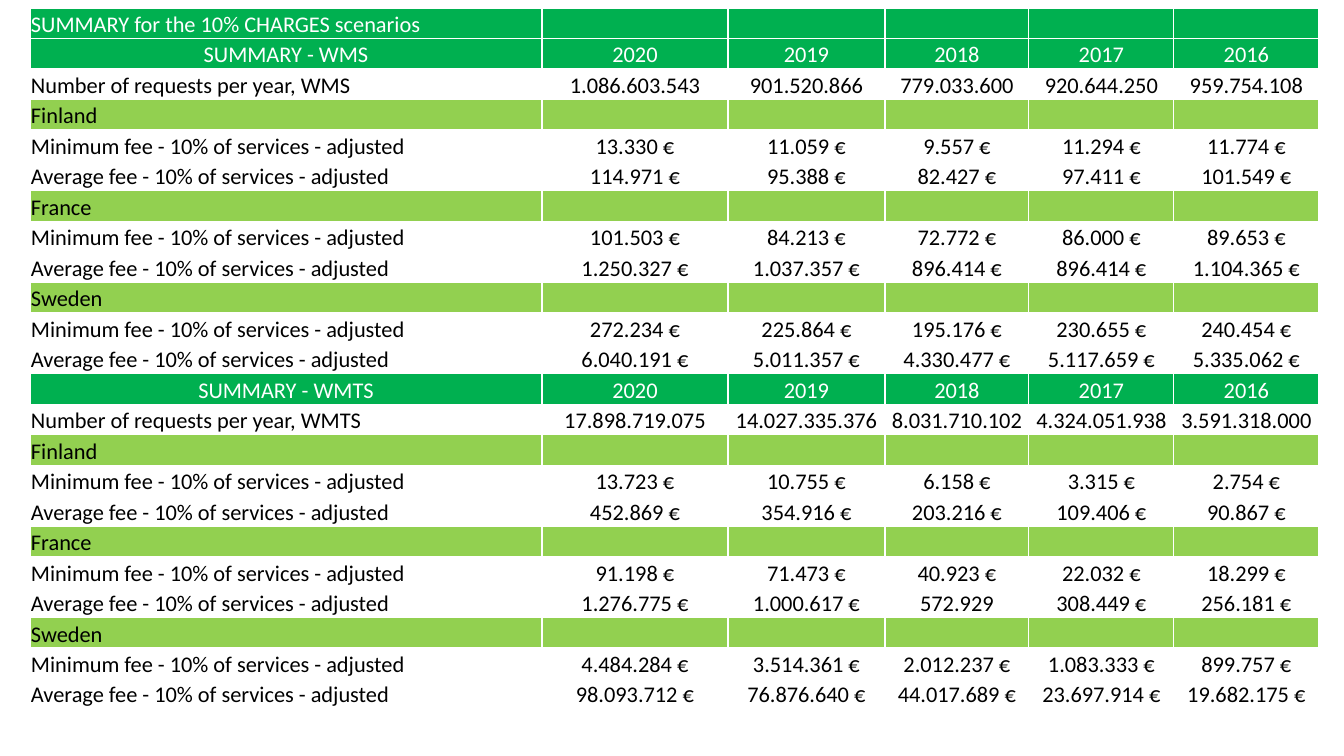
from lxml.etree import SubElement
from pptx import Presentation
from pptx.dml.color import RGBColor
from pptx.enum.text import MSO_ANCHOR as Anchor, PP_ALIGN as Align
from pptx.oxml.ns import qn
from pptx.util import Inches, Pt

PX = Inches(1) / 100.8
WHITE = RGBColor(0xFF, 0xFF, 0xFF)
BLACK = RGBColor(0x00, 0x00, 0x00)
GREEN = RGBColor(0x00, 0xB0, 0x50)
LIME = RGBColor(0x92, 0xD0, 0x50)

TITLE = "SUMMARY for the 10% CHARGES scenarios"
YEARS = "2020, 2019, 2018, 2017, 2016"
FEES = ("Minimum", "Average")
COUNTRIES = ("Finland", "France", "Sweden")
COLUMN_WIDTHS = (512, 186, 157, 144, 145, 145)

SERVICES = {
    "WMS": (
        "1.086.603.543, 901.520.866, 779.033.600, 920.644.250, 959.754.108",
        (
            ("13.330 €, 11.059 €, 9.557 €, 11.294 €, 11.774 €",
             "114.971 €, 95.388 €, 82.427 €, 97.411 €, 101.549 €"),
            ("101.503 €, 84.213 €, 72.772 €, 86.000 €, 89.653 €",
             "1.250.327 €, 1.037.357 €, 896.414 €, 896.414 €, 1.104.365 €"),
            ("272.234 €, 225.864 €, 195.176 €, 230.655 €, 240.454 €",
             "6.040.191 €, 5.011.357 €, 4.330.477 €, 5.117.659 €, 5.335.062 €"),
        ),
    ),
    "WMTS": (
        "17.898.719.075, 14.027.335.376, 8.031.710.102, 4.324.051.938, 3.591.318.000",
        (
            ("13.723 €, 10.755 €, 6.158 €, 3.315 €, 2.754 €",
             "452.869 €, 354.916 €, 203.216 €, 109.406 €, 90.867 €"),
            ("91.198 €, 71.473 €, 40.923 €, 22.032 €, 18.299 €",
             "1.276.775 €, 1.000.617 €, 572.929, 308.449 €, 256.181 €"),
            ("4.484.284 €, 3.514.361 €, 2.012.237 €, 1.083.333 €, 899.757 €",
             "98.093.712 €, 76.876.640 €, 44.017.689 €, 23.697.914 €, 19.682.175 €"),
        ),
    ),
}


def px(length):
    return round(length * PX)


def apply(target, values):
    for name, value in values.items():
        setattr(target, name, value)


def summary_rows():
    rows = [(TITLE, "", GREEN, Align.LEFT)]
    for service, (requests, charges) in SERVICES.items():
        rows.append((f"SUMMARY - {service}", YEARS, GREEN, Align.CENTER))
        rows.append((f"Number of requests per year, {service}", requests, None, Align.LEFT))
        for country, amounts in zip(COUNTRIES, charges):
            rows.append((country, "", LIME, Align.LEFT))
            for fee, values in zip(FEES, amounts):
                label = f"{fee} fee - 10% of services - adjusted"
                rows.append((label, values, None, Align.LEFT))
    return rows


class SlideBuilder:
    font = {"name": "Calibri", "size": Pt(16), "bold": False}
    cell_format = {
        "vertical_anchor": Anchor.BOTTOM,
        "margin_left": px(1),
        "margin_right": px(1),
        "margin_top": px(1),
        "margin_bottom": 0,
    }

    def __init__(self, deck):
        self.page = deck.slides.add_slide(deck.slide_layouts[6])

    def table(self, left, top, height, widths, rows):
        box = self.page.shapes.add_table(
            len(rows), len(widths), px(left), px(top), px(sum(widths)), px(height))
        grid = box.table
        apply(grid, {"first_row": False, "horz_banding": False})
        for column, width in zip(grid.columns, widths):
            column.width = px(width)
        for index, (label, values, fill, label_align) in enumerate(rows):
            grid.rows[index].height = px(height) // len(rows)
            texts = [label] + (values.split(", ") if values else [""] * (len(widths) - 1))
            for position, text in enumerate(texts):
                align = Align.CENTER if position else label_align
                self.cell(grid.cell(index, position), text, fill, align)

    def cell(self, cell, text, fill, align):
        apply(cell, self.cell_format)
        self.borders(cell)
        if fill is None:
            cell.fill.background()
        else:
            cell.fill.solid()
            cell.fill.fore_color.rgb = fill
        para = cell.text_frame.paragraphs[0]
        para.alignment = align
        if text:
            span = para.add_run()
            span.text = text
            apply(span.font, self.font)
            span.font.color.rgb = WHITE if fill == GREEN else BLACK
        else:
            ending = para._p.get_or_add_endParaRPr()
            ending.set("sz", str(round(self.font["size"].pt * 100)))

    def borders(self, cell):
        properties = cell._tc.get_or_add_tcPr()
        for side in ("lnL", "lnR", "lnT", "lnB"):
            line = SubElement(properties, qn(f"a:{side}"), w=str(Pt(1)))
            paint = SubElement(line, qn("a:solidFill"))
            SubElement(paint, qn("a:srgbClr"), val=str(WHITE))


def main():
    deck = Presentation()
    apply(deck, {"slide_width": px(1344), "slide_height": px(756)})
    SlideBuilder(deck).table(30, 8, 701, COLUMN_WIDTHS, summary_rows())
    deck.save("out.pptx")


if __name__ == "__main__":
    main()
